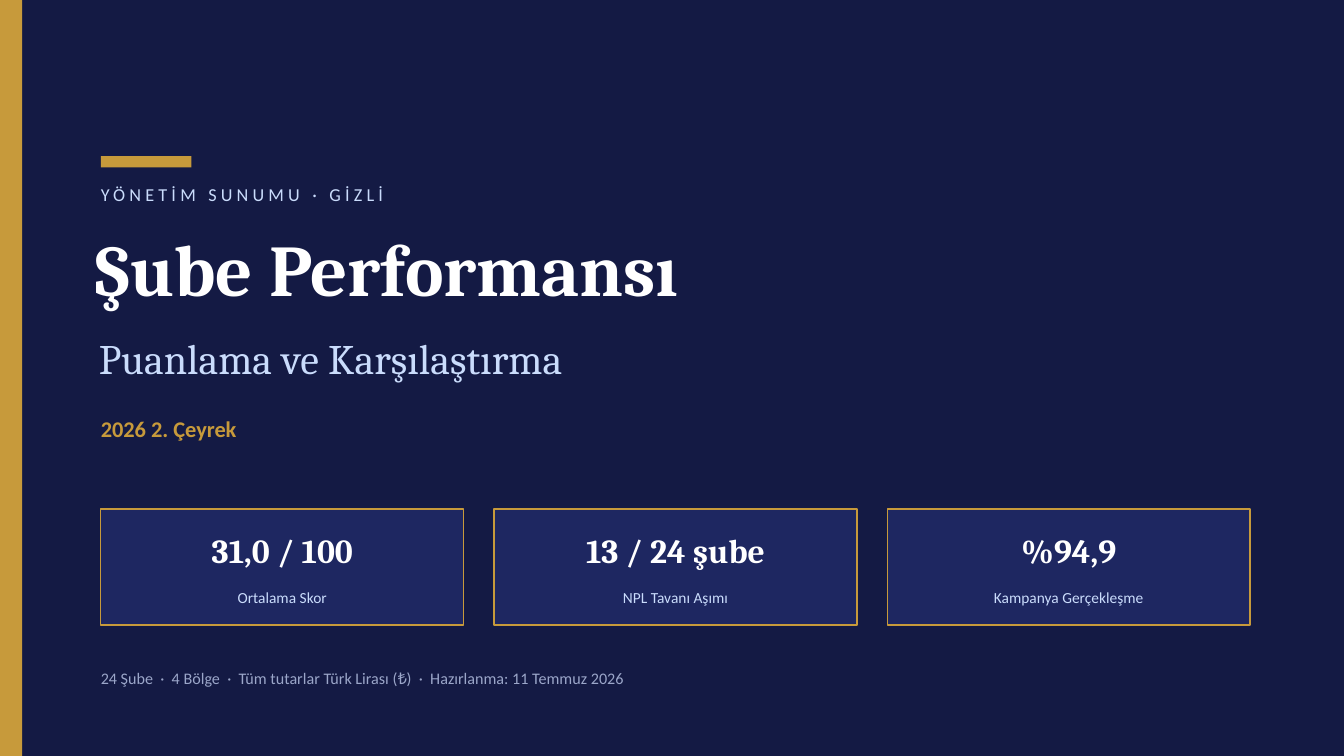
"""Build the cover slide of the branch performance presentation."""
from dataclasses import dataclass

from pptx import Presentation
from pptx.dml.color import RGBColor
from pptx.enum.shapes import MSO_SHAPE
from pptx.enum.text import MSO_ANCHOR, MSO_AUTO_SIZE, PP_ALIGN
from pptx.util import Pt

RECT = MSO_SHAPE.RECTANGLE
MIDDLE = MSO_ANCHOR.MIDDLE
NO_FIT = MSO_AUTO_SIZE.NONE
LEFT, CENTER = PP_ALIGN.LEFT, PP_ALIGN.CENTER
TITLE_ONLY = 5
EMU_PER_PX = 9144


@dataclass(frozen=True)
class Theme:
    navy: str = "141A44"
    card: str = "1E2761"
    gold: str = "C79A3B"
    ice: str = "CADCFC"
    white: str = "FFFFFF"
    muted: str = "9BA6C9"
    heading: str = "Cambria"
    body: str = "Calibri"
    title_size: float = 52
    subtitle_size: float = 30
    value_size: float = 24
    period_size: float = 16
    kicker_size: float = 13
    footer_size: float = 11.5
    label_size: float = 11


def px(*lengths):
    return [length * EMU_PER_PX for length in lengths]


class Cover:
    def __init__(self, prs, theme):
        self.theme = theme
        self.slide = prs.slides.add_slide(prs.slide_layouts[TITLE_ONLY])
        fill = self.slide.background.fill
        fill.solid()
        fill.fore_color.rgb = RGBColor.from_string(theme.navy)

    def rect(self, box, color, outline=None):
        sp = self.slide.shapes.add_shape(RECT, *px(*box))
        sp.shadow.inherit = False
        sp.fill.solid()
        sp.fill.fore_color.rgb = RGBColor.from_string(color)
        if outline:
            sp.line.color.rgb = RGBColor.from_string(outline)
            sp.line.width = Pt(1)
        else:
            sp.line.fill.background()

    def set_text(self, sp, text, font, size, color, bold=False, align=LEFT, spacing=0):
        tf = sp.text_frame
        tf.text = text
        tf.word_wrap = True
        tf.auto_size = NO_FIT
        tf.vertical_anchor = MIDDLE
        tf.margin_left = tf.margin_right = tf.margin_top = tf.margin_bottom = 0
        p = tf.paragraphs[0]
        p.alignment = align
        r = p.runs[0]
        r.font.name = font
        r.font.size = Pt(size)
        r.font.bold = bold
        r.font.color.rgb = RGBColor.from_string(color)
        if spacing:
            r._r.get_or_add_rPr().set("spc", str(spacing * 100))

    def title(self, box, text):
        t = self.theme
        sp = self.slide.shapes.title
        sp.left, sp.top, sp.width, sp.height = px(*box)
        self.set_text(sp, text, t.heading, t.title_size, t.white, bold=True)

    def text(self, box, text, font, size, color, **style):
        sp = self.slide.shapes.add_textbox(*px(*box))
        self.set_text(sp, text, font, size, color, **style)

    def card(self, left, top, width, value, label):
        t = self.theme
        self.rect((left, top, width, 115), t.card, outline=t.gold)
        self.text((left, top + 13, width, 55), value, t.heading, t.value_size,
                  t.white, bold=True, align=CENTER)
        self.text((left, top + 70, width, 35), label, t.body, t.label_size,
                  t.ice, align=CENTER)


def main():
    prs = Presentation()
    prs.slide_width, prs.slide_height = px(1333, 750)
    t = Theme()
    cover = Cover(prs, t)

    cover.rect((0, 0, 22, 750), t.gold)
    cover.rect((100, 155, 90, 11), t.gold)
    cover.text((100, 175, 1000, 35), "YÖNETİM SUNUMU · GİZLİ",
               t.body, t.kicker_size, t.ice, spacing=3)
    cover.title((95, 215, 1150, 100), "Şube Performansı")
    cover.text((98, 315, 1150, 80), "Puanlama ve Karşılaştırma",
               t.heading, t.subtitle_size, t.ice)
    cover.text((100, 405, 800, 40), "2026 2. Çeyrek",
               t.body, t.period_size, t.gold, bold=True)

    metrics = [
        ("31,0 / 100", "Ortalama Skor"),
        ("13 / 24 şube", "NPL Tavanı Aşımı"),
        ("%94,9", "Kampanya Gerçekleşme"),
    ]
    width, gap = 360, 30
    for i, (value, label) in enumerate(metrics):
        cover.card(100 + i * (width + gap), 505, width, value, label)

    cover.text((100, 655, 1150, 35),
               "24 Şube  ·  4 Bölge  ·  Tüm tutarlar Türk Lirası (₺)  ·  Hazırlanma: 11 Temmuz 2026",
               t.body, t.footer_size, t.muted)
    prs.save("out.pptx")


if __name__ == "__main__":
    main()
